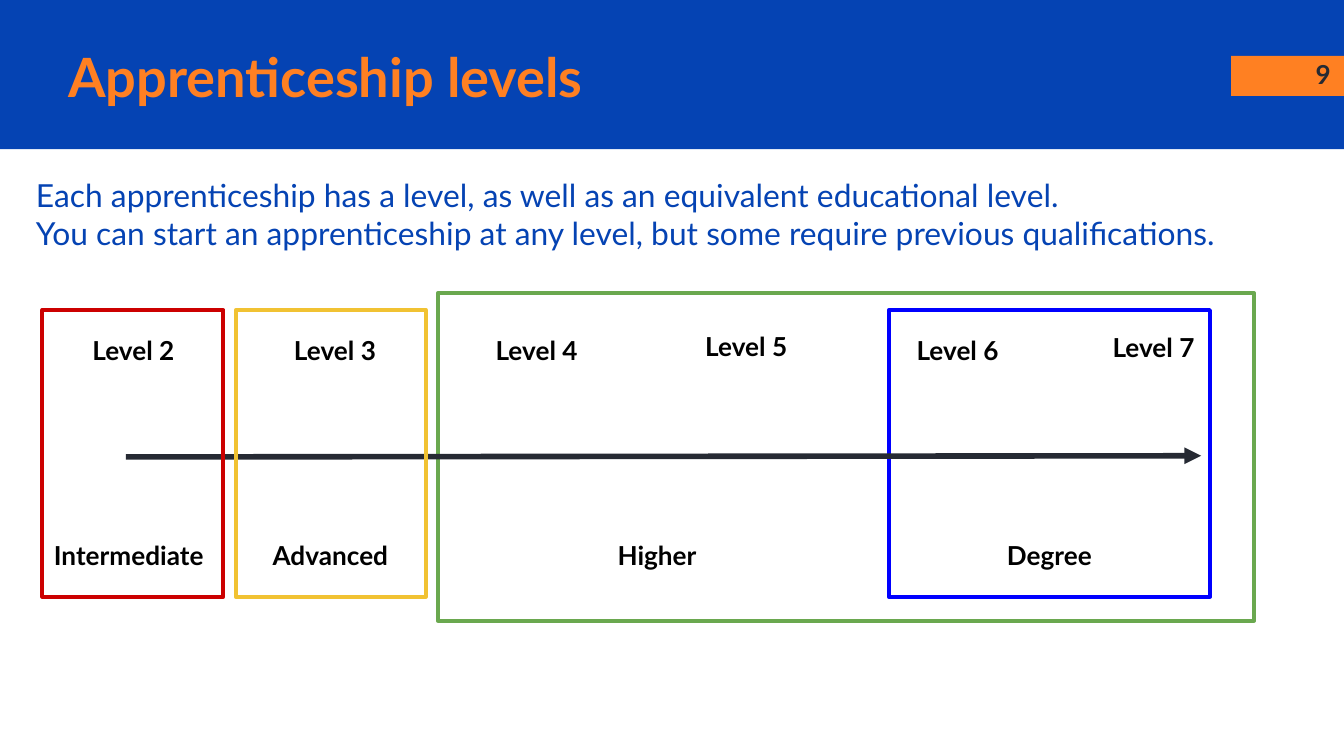
from dataclasses import dataclass

from lxml.etree import SubElement
from pptx import Presentation
from pptx.dml.color import RGBColor as Color
from pptx.enum.shapes import MSO_CONNECTOR as Connector, MSO_SHAPE as Shape
from pptx.enum.text import MSO_ANCHOR as Anchor, PP_ALIGN as Align
from pptx.oxml.ns import qn
from pptx.util import Pt


@dataclass(frozen=True)
class Theme:
    font: str = "Lato"
    blue: str = "0543B3"
    orange: str = "FF8022"
    dark: str = "262A33"
    black: str = "000000"
    intermediate: str = "CC0000"
    advanced: str = "F1C232"
    higher: str = "6AA84F"
    degree: str = "0000FF"
    title_size: float = 29
    body_size: float = 17
    label_size: float = 14
    frame_width: float = 2.25
    arrow_width: float = 3
    inset: float = 7.2


class SlideBuilder:
    def __init__(self, slide, theme):
        self.slide = slide
        self.theme = theme

    def rectangle(self, box):
        shape = self.slide.shapes.add_shape(Shape.RECTANGLE, *map(Pt, box))
        shape.shadow.inherit = False
        return shape

    def band(self, box, color):
        """Add a filled rectangle without outline."""
        shape = self.rectangle(box)
        shape.fill.solid()
        shape.fill.fore_color.rgb = Color.from_string(color)
        shape.line.fill.background()

    def frame(self, box, color):
        """Add an outlined rectangle without fill."""
        shape = self.rectangle(box)
        shape.fill.background()
        shape.line.color.rgb = Color.from_string(color)
        shape.line.width = Pt(self.theme.frame_width)

    def arrow(self, start, end, color):
        connector = self.slide.shapes.add_connector(
            Connector.STRAIGHT, *map(Pt, (*start, *end)))
        connector.line.color.rgb = Color.from_string(color)
        connector.line.width = Pt(self.theme.arrow_width)
        SubElement(connector.line._get_or_add_ln(), qn("a:tailEnd"), type="triangle")
        SubElement(connector._element.spPr, qn("a:effectLst"))

    def text(self, box, lines, size, color, bold=True, align=Align.LEFT, anchor=Anchor.TOP):
        frame = self.slide.shapes.add_textbox(*map(Pt, box)).text_frame
        inset = Pt(self.theme.inset)
        frame_format = {
            "word_wrap": True, "vertical_anchor": anchor,
            "margin_left": inset, "margin_right": inset,
            "margin_top": inset, "margin_bottom": inset,
        }
        for name, value in frame_format.items():
            setattr(frame, name, value)
        frame.text = "\n".join(lines)
        font_format = {"name": self.theme.font, "size": Pt(size), "bold": bold}
        for paragraph in frame.paragraphs:
            paragraph.alignment = align
            font = paragraph.runs[0].font
            for name, value in font_format.items():
                setattr(font, name, value)
            font.color.rgb = Color.from_string(color)

    def label(self, center, top, width, text):
        """Add a centred caption around a horizontal position."""
        self.text((center - width / 2, top, width, 31.5), [text],
                  self.theme.label_size, self.theme.black, align=Align.CENTER)


def main():
    presentation = Presentation()
    presentation.slide_width, presentation.slide_height = Pt(720), Pt(405)
    theme = Theme()
    builder = SlideBuilder(
        presentation.slides.add_slide(presentation.slide_layouts[6]), theme)

    builder.band((0, 0, 720, 80), theme.blue)
    builder.band((659.5, 30, 60.5, 21.5), theme.orange)
    builder.text((677, 24, 43, 31), ["9"], theme.label_size, theme.dark, align=Align.RIGHT)
    builder.text((29.5, 20.5, 609, 40), ["Apprenticeship levels"],
                 theme.title_size, theme.orange, anchor=Anchor.MIDDLE)
    builder.text((12.2, 87.2, 696, 55.5), [
        "Each apprenticeship has a level, as well as an equivalent educational level.",
        "You can start an apprenticeship at any level, but some require previous qualifications.",
    ], theme.body_size, theme.blue, bold=False)

    frame_top, frame_height = 166.2, 153.5
    builder.frame((234.6, 157, 437.2, 175.5), theme.higher)
    builder.frame((476.2, frame_top, 172, frame_height), theme.degree)
    builder.arrow((67.5, 244.8), (643.5, 244.2), theme.dark)

    level_positions = [(71.5, 172), (179.5, 172), (287.5, 172),
                       (399.8, 170), (513, 172), (618, 170.6)]
    for level, (center, top) in enumerate(level_positions, start=2):
        builder.label(center, top, 71.5, f"Level {level}")

    stages = {"Intermediate": 69, "Advanced": 177, "Higher": 352, "Degree": 562.2}
    for stage, center in stages.items():
        builder.label(center, 281.5, 100.5, stage)

    builder.frame((22.7, frame_top, 97, frame_height), theme.intermediate)
    builder.frame((126.3, frame_top, 101.8, frame_height), theme.advanced)

    presentation.save("out.pptx")


if __name__ == "__main__":
    main()
